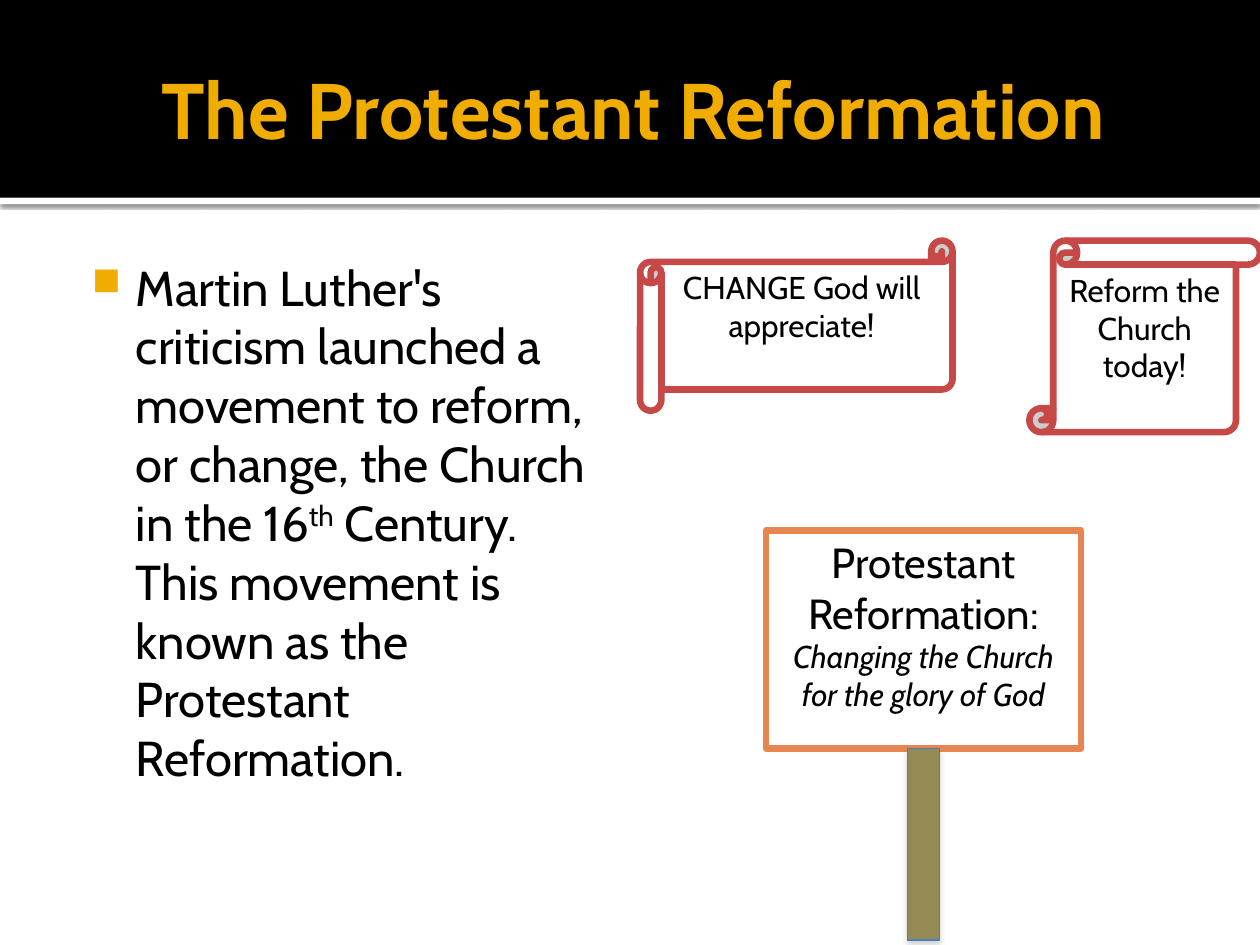
from lxml import etree
from pptx import Presentation
from pptx.dml.color import RGBColor
from pptx.enum.shapes import MSO_SHAPE
from pptx.enum.text import MSO_ANCHOR, PP_ALIGN
from pptx.oxml.ns import qn
from pptx.util import Inches, Pt

RECTANGLE = MSO_SHAPE.RECTANGLE
PROCESS = MSO_SHAPE.FLOWCHART_PROCESS
HORIZONTAL_SCROLL = MSO_SHAPE.HORIZONTAL_SCROLL
VERTICAL_SCROLL = MSO_SHAPE.VERTICAL_SCROLL
TOP, MIDDLE = MSO_ANCHOR.TOP, MSO_ANCHOR.MIDDLE
LEFT, CENTER = PP_ALIGN.LEFT, PP_ALIGN.CENTER

FONT = "Cabin"
BLACK, WHITE, GOLD = "000000", "FFFFFF", "F0AD00"
RED, ORANGE, OLIVE, BLUE, GRAY = "C64847", "E88651", "948A54", "4A7EBB", "808080"
THICK = 3.78


def color(value):
    """Return the colour for a hex string."""
    return RGBColor.from_string(value)


def add_shape(slide, kind, box, fill, line=None, width=THICK):
    """Add a filled preset shape without a shadow."""
    shape = slide.shapes.add_shape(kind, *map(Inches, box))
    shape.shadow.inherit = False
    shape.fill.solid()
    shape.fill.fore_color.rgb = color(fill)
    if line:
        shape.line.color.rgb = color(line)
        shape.line.width = Pt(width)
    else:
        shape.line.fill.background()
    return shape


def add_shadow(shape, value, opacity, blur, distance):
    """Cast a soft shadow straight down from a shape."""
    effects = shape._element.spPr.find(qn("a:effectLst"))
    shadow = etree.SubElement(
        effects, qn("a:outerShdw"), blurRad=str(Pt(blur)), dist=str(Pt(distance)),
        dir="5400000", algn="t", rotWithShape="0")
    tint = etree.SubElement(shadow, qn("a:srgbClr"), val=value)
    etree.SubElement(tint, qn("a:alpha"), val=str(opacity * 1000))


def set_frame(shape, anchor, margins=(0.1, 0.05, 0.1, 0.05)):
    """Set wrapping, anchor and margins, and return the text frame."""
    frame = shape.text_frame
    frame.word_wrap = True
    frame.vertical_anchor = anchor
    (frame.margin_left, frame.margin_top,
     frame.margin_right, frame.margin_bottom) = map(Inches, margins)
    return frame


def add_run(paragraph, text, size, value=BLACK, bold=False, italic=False):
    """Add one styled run to a paragraph."""
    run = paragraph.add_run()
    run.text = text
    run.font.name = FONT
    run.font.size = Pt(size)
    run.font.bold = bold
    run.font.italic = italic
    run.font.color.rgb = color(value)
    return run


def add_bullet(paragraph, margin, indent):
    """Give a paragraph a gold square bullet and a hanging indent."""
    properties = paragraph._p.get_or_add_pPr()
    properties.set("marL", str(Inches(margin)))
    properties.set("indent", str(Inches(indent)))
    bullet_color = etree.SubElement(properties, qn("a:buClr"))
    etree.SubElement(bullet_color, qn("a:srgbClr"), val=GOLD)
    etree.SubElement(properties, qn("a:buSzPct"), val="80000")
    etree.SubElement(properties, qn("a:buChar"), char="■")


def add_header(slide, box):
    """Add the black title band with a shadowed white rule under it."""
    left, top, width, height = box
    rule = add_shape(slide, RECTANGLE, (left, top + height, width, 0.05), WHITE)
    add_shadow(rule, BLACK, 60, 2.5, 0.8)
    add_shape(slide, RECTANGLE, box, BLACK)
    title_box = (left + 0.5, top + 0.17, width - 1, height - 0.2)
    title = slide.shapes.add_textbox(*map(Inches, title_box))
    paragraph = set_frame(title, MIDDLE, (0.1, 0.05, 0.05, 0.05)).paragraphs[0]
    paragraph.alignment = CENTER
    add_run(paragraph, "The Protestant Reformation", 45, GOLD, bold=True)


def add_body(slide, box):
    """Add the bulleted account of the movement."""
    body = slide.shapes.add_textbox(*map(Inches, box))
    paragraph = set_frame(body, TOP, (0.1, 0.1, 0.1, 0.05)).paragraphs[0]
    paragraph.alignment = LEFT
    add_bullet(paragraph, 0.48, -0.35)
    add_run(paragraph, "Martin Luther's criticism launched a movement to reform, "
            "or change, the Church in the 16", 28)
    ordinal = add_run(paragraph, "th", 28)
    ordinal._r.get_or_add_rPr().set("baseline", "30000")
    add_run(paragraph, " Century. This movement is known as the "
            "Protestant Reformation.", 28)


def add_scroll(slide, kind, box, text):
    """Add a red-edged scroll with a slogan."""
    scroll = add_shape(slide, kind, box, WHITE, RED)
    paragraph = set_frame(scroll, TOP).paragraphs[0]
    paragraph.alignment = CENTER
    add_run(paragraph, text, 18)


def add_sign(slide, box, post_width, post_height):
    """Add the placard and the post centred below it."""
    left, top, width, height = box
    board = add_shape(slide, PROCESS, box, WHITE, ORANGE)
    paragraph = set_frame(board, TOP).paragraphs[0]
    paragraph.alignment = CENTER
    add_run(paragraph, "Protestant Reformation: ", 24)
    add_run(paragraph, "Changing the Church for the glory of God", 18, italic=True)
    post_box = (left + (width - post_width) / 2, top + height, post_width, post_height)
    post = add_shape(slide, PROCESS, post_box, OLIVE, BLUE, 0.75)
    add_shadow(post, GRAY, 35, 3.1, 1.8)


def main():
    """Build and save the slide."""
    presentation = Presentation()
    presentation.slide_width = Inches(10)
    presentation.slide_height = Inches(7.5)
    slide = presentation.slides.add_slide(presentation.slide_layouts[6])
    add_header(slide, (0, 0, 10, 1.57))
    add_body(slide, (0.5, 1.94, 4.42, 5.06))
    add_scroll(slide, VERTICAL_SCROLL, (8.17, 1.91, 1.83, 1.52),
               "Reform the Church today!")
    add_scroll(slide, HORIZONTAL_SCROLL, (5.08, 1.91, 2.48, 1.35),
               "CHANGE God will appreciate!")
    add_sign(slide, (6.08, 4.21, 2.5, 1.73), 0.25, 1.52)
    presentation.save("out.pptx")


if __name__ == "__main__":
    main()
